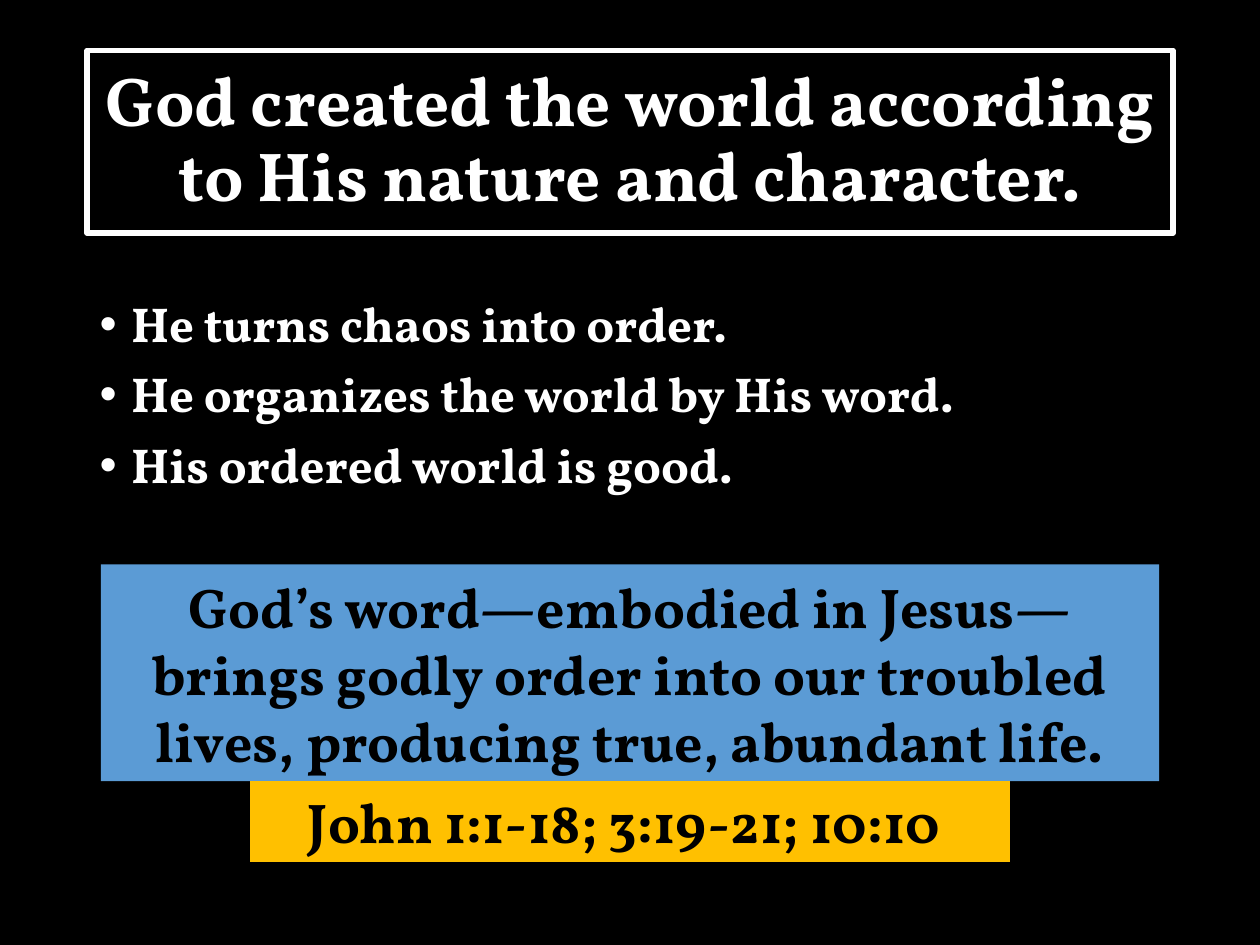
import pptx
import pptx.util
import pptx.dml.color
import pptx.enum.shapes
import pptx.enum.text
import pptx.oxml
import pptx.oxml.ns

Inches = pptx.util.Inches
Pt = pptx.util.Pt
RGBColor = pptx.dml.color.RGBColor
ALIGN = pptx.enum.text.PP_ALIGN
ANCHOR = pptx.enum.text.MSO_ANCHOR

BLACK = RGBColor(0x00, 0x00, 0x00)
WHITE = RGBColor(0xFF, 0xFF, 0xFF)
BLUE = RGBColor(0x5B, 0x9B, 0xD5)
GOLD = RGBColor(0xFF, 0xC0, 0x00)
FONT = "Vollkorn"

SLIDE_WIDTH, SLIDE_HEIGHT = 10, 7.5
HEADING = "God created the world according to His nature and character."
POINTS = (
    "He turns chaos into order.",
    "He organizes the world by His word.",
    "His ordered world is good.",
)
MESSAGE = (
    "God’s word—embodied in Jesus—brings godly order into our troubled "
    "lives, producing true, abundant life."
)
VERSES = "John 1:1-18; 3:19-21; 10:10 "


def centred_box(top, width, height):
    return (SLIDE_WIDTH - width) / 2, top, width, height


def place(part, box):
    part.left, part.top, part.width, part.height = map(Inches, box)


def prepare_frame(part, anchor):
    frame = part.text_frame
    frame.word_wrap = True
    frame.auto_size = pptx.enum.text.MSO_AUTO_SIZE.NONE
    frame.vertical_anchor = anchor
    return frame


def add_words(paragraph, words, size, color):
    run = paragraph.add_run()
    run.text = words
    run.font.name = FONT
    run.font.size = Pt(size)
    run.font.bold = True
    run.font.color.rgb = color


def set_bullet(paragraph):
    properties = paragraph._p.get_or_add_pPr()
    properties.set("marL", str(Inches(0.25)))
    properties.set("indent", str(Inches(-0.25)))
    for tag, attribute, value in (
        ("a:buFont", "typeface", "Arial"),
        ("a:buChar", "char", "•"),
    ):
        bullet = pptx.oxml.parse_xml(f"<{tag} {pptx.oxml.ns.nsdecls('a')}/>")
        bullet.set(attribute, value)
        properties.append(bullet)


def fill_heading(title, box):
    place(title, box)
    title.line.color.rgb = WHITE
    title.line.width = Pt(3)
    paragraph = prepare_frame(title, ANCHOR.MIDDLE).paragraphs[0]
    paragraph.alignment = ALIGN.CENTER
    paragraph.line_spacing = 0.9
    add_words(paragraph, HEADING, 39.6, WHITE)


def fill_points(body, box):
    place(body, box)
    frame = prepare_frame(body, ANCHOR.TOP)
    for index, point in enumerate(POINTS):
        paragraph = frame.add_paragraph() if index else frame.paragraphs[0]
        set_bullet(paragraph)
        paragraph.line_spacing = 0.9
        paragraph.space_before = Pt(10 if index else 0)
        add_words(paragraph, point, 28, WHITE)


def add_banner(slide, box, words, color):
    banner = slide.shapes.add_shape(
        pptx.enum.shapes.MSO_SHAPE.RECTANGLE, *map(Inches, box)
    )
    banner.shadow.inherit = False
    banner.fill.solid()
    banner.fill.fore_color.rgb = color
    banner.line.fill.background()
    paragraph = prepare_frame(banner, ANCHOR.MIDDLE).paragraphs[0]
    paragraph.alignment = ALIGN.CENTER
    add_words(paragraph, words, 32, BLACK)


def main():
    deck = pptx.Presentation()
    deck.slide_width = Inches(SLIDE_WIDTH)
    deck.slide_height = Inches(SLIDE_HEIGHT)
    slide = deck.slides.add_slide(deck.slide_layouts[1])
    slide.background.fill.solid()
    slide.background.fill.fore_color.rgb = BLACK

    fill_heading(slide.shapes.title, centred_box(0.4, 8.62, 1.45))
    fill_points(slide.placeholders[1], centred_box(2.33, 8.62, 1.78))
    add_banner(slide, centred_box(4.48, 8.4, 1.72), MESSAGE, BLUE)
    add_banner(slide, centred_box(6.2, 6.03, 0.64), VERSES, GOLD)
    deck.save("out.pptx")


if __name__ == "__main__":
    main()
